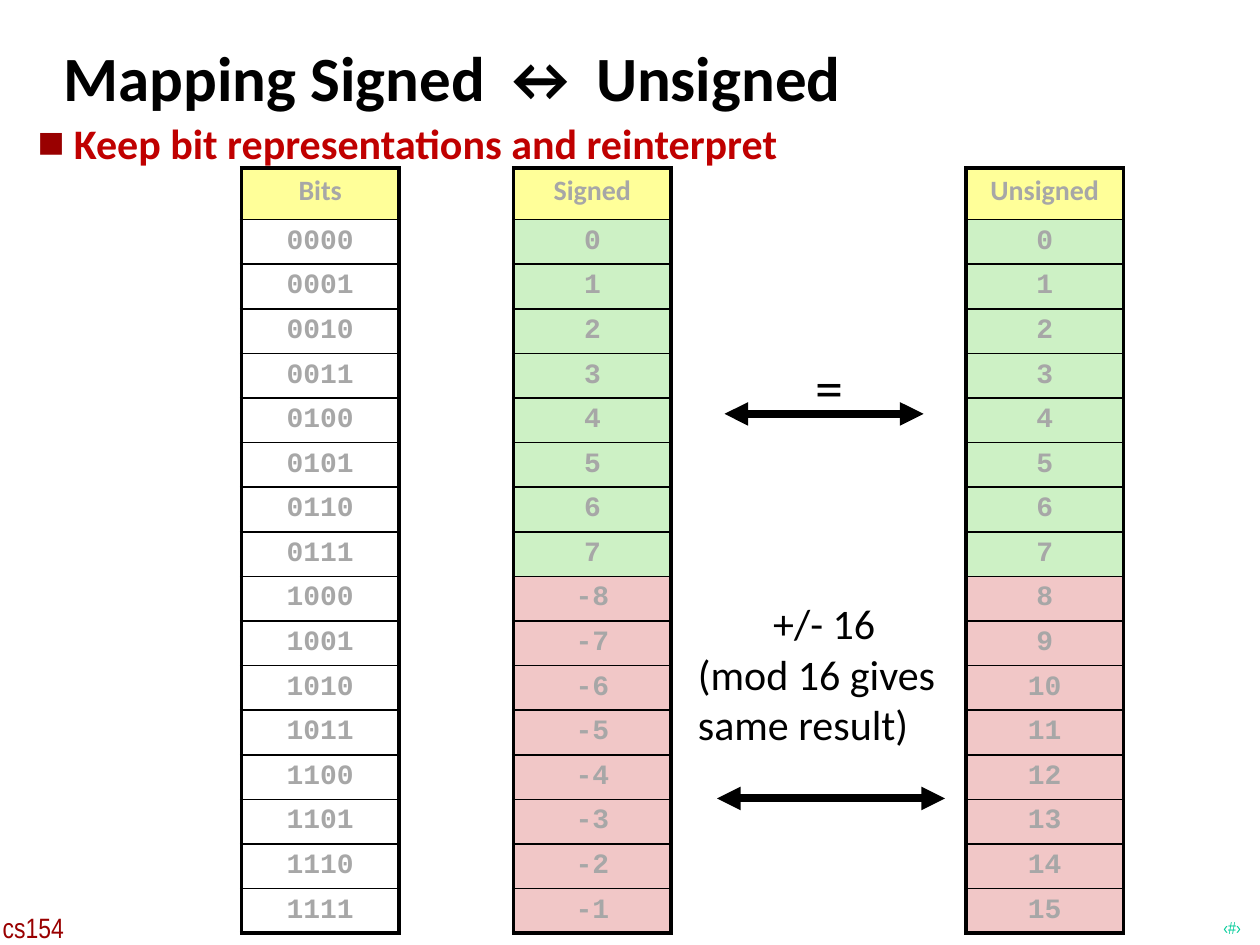
"""Build the slide that maps signed to unsigned four-bit integers."""
import lxml.etree
import pptx
import pptx.dml.color
import pptx.enum.shapes
import pptx.enum.text
import pptx.oxml.ns
import pptx.util

Pt = pptx.util.Pt
qn = pptx.oxml.ns.qn
ALIGN = pptx.enum.text.PP_ALIGN
ANCHOR = pptx.enum.text.MSO_ANCHOR

COLORS = {
    "ink": "000000", "cell text": "A7A7A7", "header": "FFFF99",
    "same": "CDF1C5", "shifted": "F1C7C7", "bullet": "990000",
    "lead": "C00000", "course": "990000", "number": "00CC99",
}
TITLE = "Mapping Signed ↔ Unsigned"
LEAD = "Keep bit representations and reinterpret"
NUMBERS = range(16)
COLUMNS = [
    ("Signed", 293.5, [str(n if n < 8 else n - 16) for n in NUMBERS], ("same", "shifted")),
    ("Unsigned", 552, [str(n) for n in NUMBERS], ("same", "shifted")),
    ("Bits", 138, [f"{n:04b}" for n in NUMBERS], (None, None)),
]
RELATIONS = [
    {"arrow": (527.75, 414, 236.5), "box": (462.5, 198, 23, 46), "inset": (3.6, 3.6),
     "lines": ["="], "size": 32, "align": ALIGN.CENTER, "anchor": ANCHOR.TOP, "indent": 0},
    {"arrow": (540, 409.75, 456.25), "box": (391.75, 366.5, 47, 36.5), "inset": (7.2, 3.6),
     "lines": ["+/- 16", "(mod 16 gives", "same result)"], "size": 24,
     "align": ALIGN.LEFT, "anchor": ANCHOR.MIDDLE, "indent": 43},
]
FOOTERS = [
    ("‹#›", (695.5, 520.5, 18, 18), 10, "number"),
    ("cs154", (-2, 516.5, 44, 26.5), 16, "course"),
]
TABLE_TOP, COLUMN_WIDTH, HEADER_HEIGHT, ROW_HEIGHT = 96, 90, 29.5, 25.5
THICK, THIN = 2.25, 1


def rgb(name):
    return pptx.dml.color.RGBColor.from_string(COLORS[name])


def style(paragraph, face, size, color, bold=False, align=ALIGN.LEFT):
    paragraph.alignment = align
    font = paragraph.font
    font.name, font.size, font.bold = face, Pt(size), bold
    font.color.rgb = rgb(color)


def place(shape, box):
    shape.left, shape.top, shape.width, shape.height = map(Pt, box)


def set_frame(frame, inset, wrap=False, anchor=ANCHOR.TOP):
    frame.margin_left = frame.margin_right = Pt(inset[0])
    frame.margin_top = frame.margin_bottom = Pt(inset[1])
    frame.word_wrap = wrap
    frame.auto_size = pptx.enum.text.MSO_AUTO_SIZE.NONE
    frame.vertical_anchor = anchor


def hang(paragraph, indent):
    properties = paragraph._p.get_or_add_pPr()
    properties.set("marL", str(Pt(indent)))
    properties.set("indent", str(-Pt(indent)))
    return properties


def add_child(parent, tag, **attributes):
    return lxml.etree.SubElement(parent, qn(tag), attributes)


def set_borders(cell, top, bottom):
    properties = cell._tc.get_or_add_tcPr()
    for side, width in (("L", THICK), ("R", THICK), ("T", top), ("B", bottom)):
        line = add_child(properties, f"a:ln{side}", w=str(Pt(width)))
        add_child(add_child(line, "a:solidFill"), "a:srgbClr", val=COLORS["ink"])


def fill_cell(cell, text, face, color):
    cell.margin_left = cell.margin_right = cell.margin_top = cell.margin_bottom = Pt(3.6)
    if color:
        cell.fill.solid()
        cell.fill.fore_color.rgb = rgb(color)
    else:
        cell.fill.background()
    cell.text = text
    paragraph = cell.text_frame.paragraphs[0]
    paragraph.line_spacing = 0.95
    style(paragraph, face, 16, "cell text", True, ALIGN.CENTER)


def add_column(slide, heading, left, values, colors):
    entries = [(heading, "Calibri", "header")]
    entries += [(value, "Courier New", colors[n // 8]) for n, value in enumerate(values)]
    height = HEADER_HEIGHT + ROW_HEIGHT * len(values)
    table = slide.shapes.add_table(
        len(entries), 1, Pt(left), Pt(TABLE_TOP), Pt(COLUMN_WIDTH), Pt(height)).table
    table.first_row = table.horz_banding = False
    last = len(entries) - 1
    for row, entry in enumerate(entries):
        table.rows[row].height = Pt(ROW_HEIGHT if row else HEADER_HEIGHT)
        cell = table.cell(row, 0)
        set_borders(cell, THIN if row else THICK, THICK if row == last else THIN)
        fill_cell(cell, *entry)


def add_relation(slide, relation):
    shapes = slide.shapes.add_group_shape().shapes
    start, end, y = map(Pt, relation["arrow"])
    arrow = shapes.add_connector(pptx.enum.shapes.MSO_CONNECTOR.STRAIGHT, start, y, end, y)
    arrow.line.width = Pt(4.5)
    arrow.line.color.rgb = rgb("ink")
    for tag in ("a:headEnd", "a:tailEnd"):
        add_child(arrow.line._ln, tag, type="triangle")
    add_child(arrow._element.spPr, "a:effectLst")

    frame = shapes.add_textbox(*map(Pt, relation["box"])).text_frame
    set_frame(frame, relation["inset"], anchor=relation["anchor"])
    frame.text = "\n".join(relation["lines"])
    for paragraph in frame.paragraphs:
        style(paragraph, "Calibri", relation["size"], "ink", align=relation["align"])
    if relation["indent"]:
        frame.paragraphs[0]._p.get_or_add_pPr().set("marL", str(Pt(relation["indent"])))


def add_heading(slide):
    title = slide.shapes.title
    place(title, (31.5, 19.5, 537, 44))
    set_frame(title.text_frame, (5, 2.5))
    title.text_frame.text = TITLE
    paragraph = title.text_frame.paragraphs[0]
    hang(paragraph, 9.5)
    style(paragraph, "Calibri", 36, "ink", True)


def add_lead(slide):
    lead = slide.placeholders[1]
    place(lead, (15, 63.5, 682, 70))
    set_frame(lead.text_frame, (7.2, 3.6), wrap=True)
    lead.text_frame.text = LEAD
    paragraph = lead.text_frame.paragraphs[0]
    paragraph.space_before = Pt(0)
    properties = hang(paragraph, 20)
    add_child(add_child(properties, "a:buClr"), "a:srgbClr", val=COLORS["bullet"])
    add_child(properties, "a:buSzPct", val="60000")
    add_child(properties, "a:buChar", char="⬛")
    style(paragraph, "Calibri", 24, "lead", True)


def main():
    deck = pptx.Presentation()
    deck.slide_width, deck.slide_height = Pt(720), Pt(540)
    slide = deck.slides.add_slide(deck.slide_layouts[1])
    for text, box, size, color in FOOTERS:
        frame = slide.shapes.add_textbox(*map(Pt, box)).text_frame
        set_frame(frame, (3.6, 3.6))
        frame.text = text
        style(frame.paragraphs[0], "Arial Narrow", size, color)
    add_heading(slide)
    for column in COLUMNS:
        add_column(slide, *column)
    for relation in RELATIONS:
        add_relation(slide, relation)
    add_lead(slide)
    deck.save("out.pptx")


if __name__ == "__main__":
    main()
